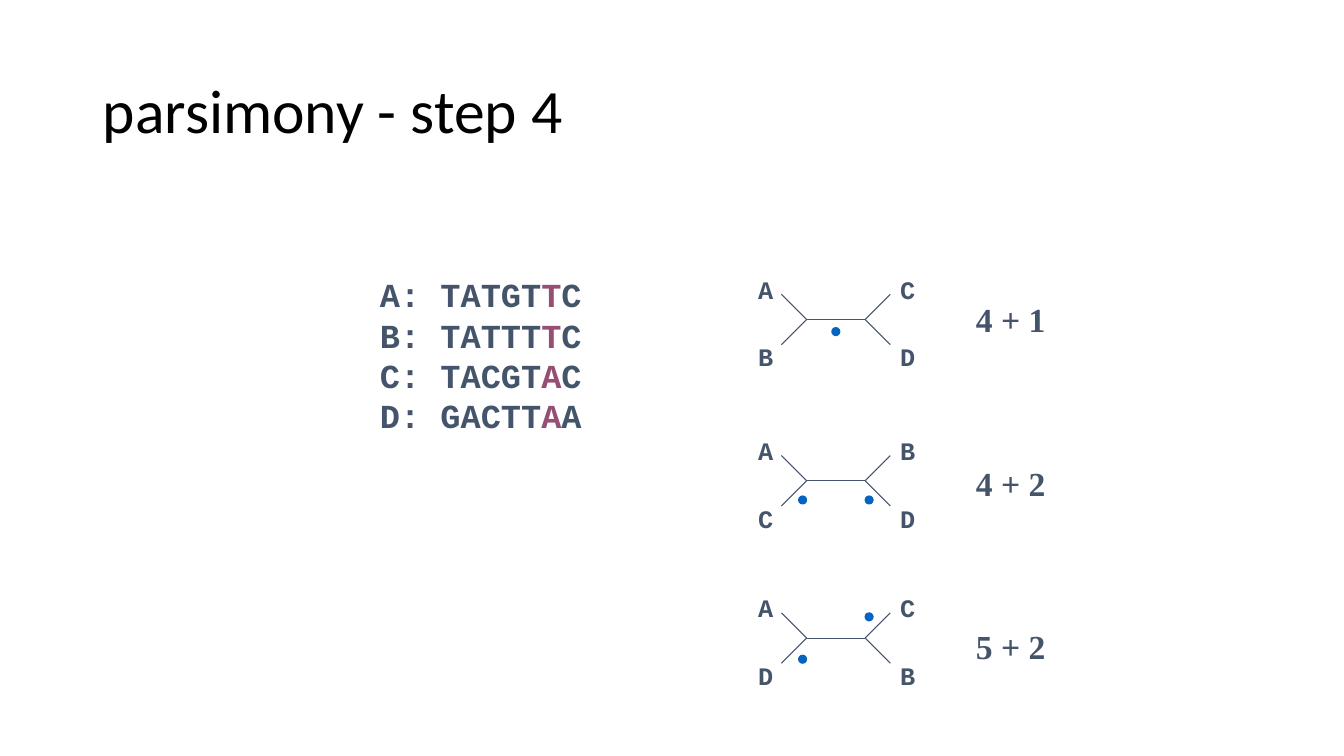
from dataclasses import dataclass

from lxml import etree
from pptx import Presentation
from pptx.dml.color import RGBColor
from pptx.enum import shapes, text
from pptx.oxml.ns import qn
from pptx.util import Inches, Pt


@dataclass(frozen=True)
class Theme:
    title: RGBColor = RGBColor(0x00, 0x00, 0x00)
    ink: RGBColor = RGBColor(0x44, 0x54, 0x6A)
    site: RGBColor = RGBColor(0x95, 0x4F, 0x72)
    change: RGBColor = RGBColor(0x05, 0x63, 0xC1)
    title_font: str = "Calibri"
    sequence_font: str = "Courier New"
    score_font: str = "Times New Roman"
    title_size: float = 44
    body_size: float = 24
    taxon_size: float = 18
    line_width: float = 0.75


@dataclass(frozen=True)
class Tree:
    hub_y: float
    taxa: str  # top left, bottom left, top right, bottom right
    score: str
    changes: tuple[tuple[float, float], ...]  # dot offsets from the left hub


THEME = Theme()
SEQUENCES = {"A": "TATGTTC", "B": "TATTTTC", "C": "TACGTAC", "D": "GACTTAA"}
SITE = 5  # index of the column being scored
LEFT_HUB, RIGHT_HUB = 8.0, 8.58
BRANCH = 0.25
DOT = 0.08
TREES = [
    Tree(3.17, "ABCD", "4 + 1", ((0.25, 0.08),)),
    Tree(4.77, "ACBD", "4 + 2", ((-0.08, 0.15), (0.58, 0.15))),
    Tree(6.33, "ADCB", "5 + 2", ((-0.08, 0.17), (0.58, -0.25))),
]


def style_run(r, font: str, size: float, color: RGBColor, bold: bool = True) -> None:
    r.font.name = font
    r.font.size = Pt(size)
    r.font.bold = bold
    r.font.color.rgb = color


def add_text_box(parent, left: float, top: float, width: float, height: float):
    sp = parent.add_textbox(Inches(left), Inches(top), Inches(width), Inches(height))
    tf = sp.text_frame
    tf.word_wrap = False
    tf.auto_size = text.MSO_AUTO_SIZE.SHAPE_TO_FIT_TEXT
    return tf


def add_branch(parent, x1: float, y1: float, x2: float, y2: float) -> None:
    line = parent.add_connector(shapes.MSO_CONNECTOR.STRAIGHT,
                                Inches(x1), Inches(y1), Inches(x2), Inches(y2))
    line.line.color.rgb = THEME.ink
    line.line.width = Pt(THEME.line_width)
    etree.SubElement(line._element.spPr, qn("a:effectLst"))


def add_change(parent, x: float, y: float) -> None:
    dot = parent.add_shape(shapes.MSO_SHAPE.OVAL,
                           Inches(x), Inches(y), Inches(DOT), Inches(DOT))
    dot.shadow.inherit = False
    dot.fill.solid()
    dot.fill.fore_color.rgb = THEME.change
    dot.line.color.rgb = THEME.change
    dot.line.width = Pt(THEME.line_width)


def add_tree(slide, tree: Tree) -> None:
    group = slide.shapes.add_group_shape().shapes
    taxa = iter(tree.taxa)
    add_branch(group, LEFT_HUB, tree.hub_y, RIGHT_HUB, tree.hub_y)
    for hub, side, label_x in ((LEFT_HUB, -1, 7.42), (RIGHT_HUB, 1, 8.83)):
        for direction, label_dy in ((-1, -0.5), (1, 0.17)):
            add_branch(group, hub, tree.hub_y,
                       hub + side * BRANCH, tree.hub_y + direction * BRANCH)
            tf = add_text_box(group, label_x, tree.hub_y + label_dy, 0.35, 0.4)
            tf.text = next(taxa)
            style_run(tf.paragraphs[0].runs[0], THEME.sequence_font,
                      THEME.taxon_size, THEME.ink)
    for dx, dy in tree.changes:
        add_change(group, LEFT_HUB + dx, tree.hub_y + dy)


def add_title(slide, title: str) -> None:
    sp = slide.shapes.title
    sp.left, sp.top, sp.width, sp.height = map(Inches, (0.92, 0.4, 11.5, 1.45))
    tf = sp.text_frame
    tf.text = title
    tf.auto_size = text.MSO_AUTO_SIZE.NONE
    tf.vertical_anchor = text.MSO_ANCHOR.MIDDLE
    p = tf.paragraphs[0]
    p.alignment = text.PP_ALIGN.LEFT
    p.line_spacing = 0.9
    style_run(p.runs[0], THEME.title_font, THEME.title_size, THEME.title, bold=False)


def add_sequences(slide) -> None:
    tf = add_text_box(slide.shapes, 3.67, 2.67, 2.22, 1.72)
    for i, (taxon, bases) in enumerate(SEQUENCES.items()):
        p = tf.add_paragraph() if i else tf.paragraphs[0]
        parts = ((f"{taxon}: {bases[:SITE]}", THEME.ink),
                 (bases[SITE], THEME.site),
                 (bases[SITE + 1:], THEME.ink))
        for part, color in parts:
            r = p.add_run()
            r.text = part
            style_run(r, THEME.sequence_font, THEME.body_size, color)


def add_scores(slide) -> None:
    tf = add_text_box(slide.shapes, 9.58, 2.92, 0.9, 3.74)
    for i, tree in enumerate(TREES):
        p = tf.add_paragraph() if i else tf.paragraphs[0]
        p.text = tree.score
        p.space_before = Pt(88 if i else 0)
        style_run(p.runs[0], THEME.score_font, THEME.body_size, THEME.ink)


def main() -> None:
    prs = Presentation()
    prs.slide_width, prs.slide_height = Inches(13.33), Inches(7.5)
    slide = prs.slides.add_slide(prs.slide_layouts.get_by_name("Title Only"))

    # Title and alignment
    add_title(slide, "parsimony - step 4")
    add_sequences(slide)

    # Candidate trees with their scores
    for tree in TREES:
        add_tree(slide, tree)
    add_scores(slide)

    prs.save("out.pptx")


if __name__ == "__main__":
    main()
